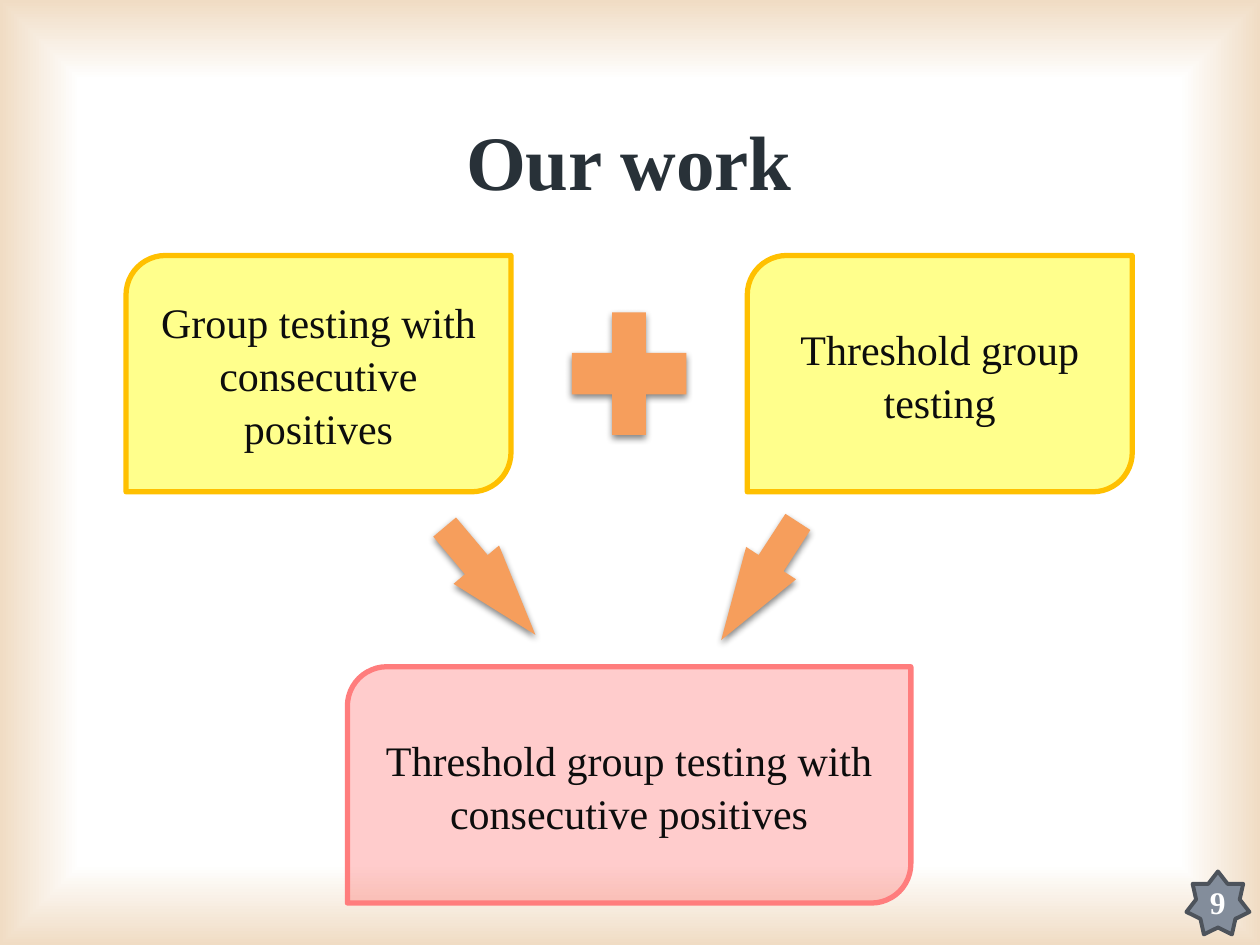
from pptx import Presentation
from pptx.dml.color import RGBColor
from pptx.enum.shapes import MSO_SHAPE
from pptx.enum.text import MSO_ANCHOR, PP_ALIGN
from pptx.oxml import parse_xml
from pptx.oxml.ns import nsdecls
from pptx.util import Pt
from lxml.etree import SubElement

COLORS = {
    "edge": "F0DCC4", "white": "FFFFFF", "title": "283138", "body": "0D0D0D",
    "yellow": "FFFF00", "amber": "FFC000", "red": "FF0000", "rose": "FF7D7D",
    "orange": "F69E5C", "slate": "838D9B", "slate_dark": "4D535B",
}
FONT = "Times New Roman"
W, H = 720, 540


def rgb(name):
    return RGBColor.from_string(COLORS[name])


def add_shape(slide, kind, box, fill, line=None, line_width=0, alpha=None):
    s = slide.shapes.add_shape(kind, *map(Pt, box))
    s.shadow.inherit = False
    s.fill.solid()
    s.fill.fore_color.rgb = rgb(fill)
    if alpha is not None:
        color = s._element.spPr.find(".//{*}srgbClr")
        SubElement(color, color.tag.replace("srgbClr", "alpha"), val=str(alpha * 1000))
    if line:
        s.line.color.rgb = rgb(line)
        s.line.width = Pt(line_width)
    else:
        s.line.fill.background()
    return s


def write_text(s, text, size, color, bold=False, **frame):
    tf = s.text_frame
    for name, value in {"word_wrap": True, "vertical_anchor": MSO_ANCHOR.MIDDLE, **frame}.items():
        setattr(tf, name, value)
    p = tf.paragraphs[0]
    p.alignment = PP_ALIGN.CENTER
    p.line_spacing = 1.05
    r = p.add_run()
    r.text = text
    for name, value in {"name": FONT, "size": Pt(size), "bold": bold}.items():
        setattr(r.font, name, value)
    r.font.color.rgb = rgb(color)


def add_background(slide, box):
    """Soft tinted frame that fades to white towards the middle."""
    s = add_shape(slide, MSO_SHAPE.RECTANGLE, box, "white")
    stops = "".join(
        f'<a:gs pos="{pos * 1000}"><a:srgbClr val="{COLORS[name]}"/></a:gs>'
        for pos, name in ((0, "white"), (83, "white"), (100, "edge")))
    gradient = parse_xml(
        f'<a:gradFill {nsdecls("a")} rotWithShape="1"><a:gsLst>{stops}</a:gsLst>'
        '<a:path path="rect"><a:fillToRect l="50000" t="50000" r="50000" b="50000"/>'
        '</a:path></a:gradFill>')
    spPr = s._element.spPr
    spPr.replace(spPr.find("{*}solidFill"), gradient)


def add_title(slide, box, text):
    s = slide.shapes.add_textbox(*map(Pt, box))
    write_text(s, text, 44, "title", bold=True,
               vertical_anchor=MSO_ANCHOR.TOP, margin_top=Pt(6.5))


def add_topic(slide, box, text, fill, line, alpha):
    s = add_shape(slide, MSO_SHAPE.ROUND_2_DIAG_RECTANGLE, box, fill, line, 3, alpha)
    write_text(s, text, 24, "body")


def add_symbol(slide, kind, box, adjustments, rotation=0):
    """Orange plus or arrow with a soft shadow below."""
    s = add_shape(slide, kind, box, "orange")
    for i, value in enumerate(adjustments):
        s.adjustments[i] = value
    s.rotation = rotation
    effects = s._element.spPr.find("{*}effectLst")
    effects.append(parse_xml(
        f'<a:outerShdw {nsdecls("a")} blurRad="{Pt(4)}" dist="{Pt(2)}" dir="5400000" '
        'rotWithShape="0"><a:srgbClr val="000000"><a:alpha val="48000"/></a:srgbClr>'
        '</a:outerShdw>'))


def add_diagram(slide, box):
    """Two topics above, joined by a plus, leading to their combination."""
    x, y, w, h = box
    topic_w, topic_h = 220, 135
    for left, text in ((x, "Group testing with consecutive positives"),
                       (x + w - topic_w, "Threshold group testing")):
        add_topic(slide, (left, y, topic_w, topic_h), text, "yellow", "amber", 45)

    centre = x + w / 2
    plus_w, plus_h = 65.5, 70
    add_symbol(slide, MSO_SHAPE.CROSS,
               (centre - plus_w / 2, y + (topic_h - plus_h) / 2, plus_w, plus_h), [0.353])

    result_w = 322
    add_topic(slide, (centre - result_w / 2, y + h - topic_h, result_w, topic_h),
              "Threshold group testing with consecutive positives", "red", "rose", 20)

    arrow_w, arrow_h = 80.5, 34
    for offset, rotation in ((-79.5, 49.9), (74.5, 123)):
        add_symbol(slide, MSO_SHAPE.RIGHT_ARROW,
                   (centre + offset - arrow_w / 2, y + 169, arrow_w, arrow_h),
                   [0.5, 1.542], rotation)


def add_page_number(slide, box, number):
    s = add_shape(slide, MSO_SHAPE.STAR_7_POINT, box, "slate", "slate_dark", 2.25)
    write_text(s, number, 18, "white", bold=True, word_wrap=False)


def main():
    prs = Presentation()
    prs.slide_width, prs.slide_height = Pt(W), Pt(H)
    slide = prs.slides.add_slide(prs.slide_layouts[6])
    add_background(slide, (0, 0, W, H))
    add_page_number(slide, (678, 498, 36, 36), "9")
    add_diagram(slide, (72, 146, 575, 370))
    add_title(slide, (54, 56, 611, 83), "Our work")
    prs.save("out.pptx")


if __name__ == "__main__":
    main()
